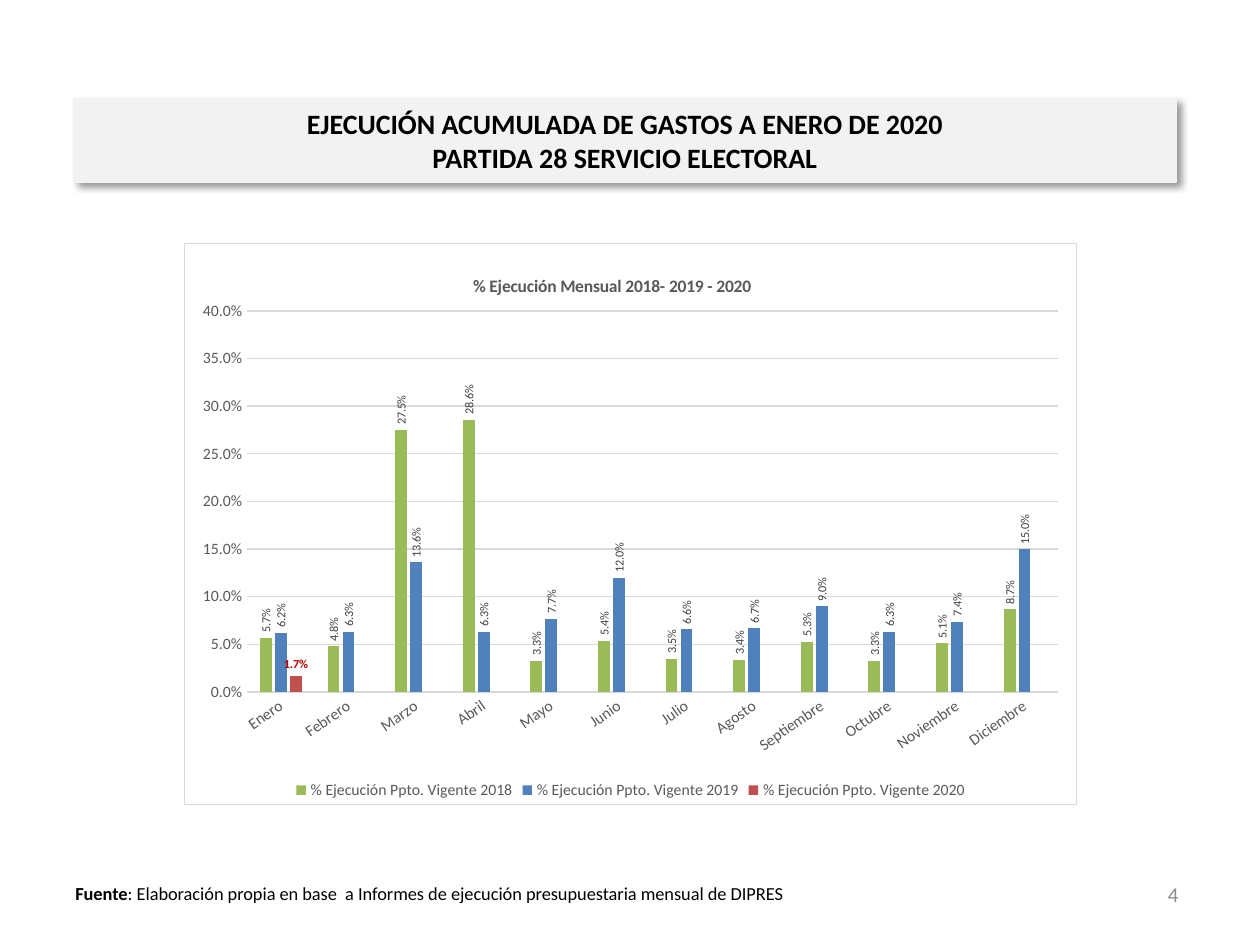
from dataclasses import dataclass
from typing import NamedTuple

from lxml.etree import _Element as Element
from pptx import Presentation
from pptx.chart.data import CategoryChartData
from pptx.dml.color import RGBColor
from pptx.enum.chart import XL_CHART_TYPE as ChartType
from pptx.enum.chart import XL_LABEL_POSITION as LabelPosition
from pptx.enum.chart import XL_LEGEND_POSITION as LegendPosition
from pptx.enum.chart import XL_TICK_MARK as TickMark
from pptx.enum.text import MSO_ANCHOR as Anchor
from pptx.enum.text import PP_ALIGN as Align
from pptx.oxml import parse_xml
from pptx.oxml.ns import nsdecls, qn
from pptx.util import Emu, Pt

EMU_PER_PX = 914400 / 126


@dataclass(frozen=True)
class Theme:
    font: str = "Calibri"
    ink: str = "000000"
    axis: str = "595959"
    label: str = "404040"
    alert: str = "C00000"
    page_number: str = "8C8C8C"
    rule: str = "D9D9D9"
    banner: str = "F2F2F2"
    paper: str = "FFFFFF"
    title_size: float = 16
    number_size: float = 12
    source_size: float = 10.5
    chart_size: float = 10
    axis_size: float = 9
    label_size: float = 7


class Box(NamedTuple):
    left: int
    top: int
    width: int
    height: int


class YearSeries(NamedTuple):
    year: int
    percents: tuple[float, ...]
    color: str
    label_color: str
    label_bold: bool
    label_angle: int


THEME = Theme()
MONTHS = ("Enero", "Febrero", "Marzo", "Abril", "Mayo", "Junio", "Julio",
          "Agosto", "Septiembre", "Octubre", "Noviembre", "Diciembre")
YEARS = (
    YearSeries(2018, (5.7, 4.8, 27.5, 28.6, 3.3, 5.4, 3.5, 3.4, 5.3, 3.3, 5.1, 8.7),
               "9BBB59", THEME.label, False, -90),
    YearSeries(2019, (6.2, 6.3, 13.6, 6.3, 7.7, 12.0, 6.6, 6.7, 9.0, 6.3, 7.4, 15.0),
               "4F81BD", THEME.label, False, -90),
    YearSeries(2020, (1.7,), "C0504D", THEME.alert, True, 0),
)


def px(length: int) -> Emu:
    return Emu(round(length * EMU_PER_PX))


def place(box: Box) -> tuple[Emu, ...]:
    return tuple(px(length) for length in box)


def style_font(font, size: float, color: str, bold: bool = False) -> None:
    font.name, font.size, font.bold = THEME.font, Pt(size), bold
    font.color.rgb = RGBColor.from_string(color)


def style_line(line, color: str) -> None:
    line.color.rgb = RGBColor.from_string(color)
    line.width = Pt(0.75)


def rotate_text(owner: Element, degrees: int) -> None:
    body = owner.find(qn("c:txPr")).find(qn("a:bodyPr"))
    body.set("rot", str(degrees * 60000))
    body.set("vert", "horz")


def set_layout(owner: Element, index: int, target: str = "", **shares: float) -> None:
    """Fix a chart part at shares of the chart's width and height."""
    for old in owner.findall(qn("c:layout")):
        owner.remove(old)
    inner = f'<c:layoutTarget val="{target}"/>' if target else ""
    modes = '<c:xMode val="edge"/><c:yMode val="edge"/>'
    sizes = "".join(f'<c:{key} val="{share}"/>' for key, share in shares.items())
    owner.insert(index, parse_xml(
        f'<c:layout {nsdecls("c")}><c:manualLayout>{inner}{modes}{sizes}'
        "</c:manualLayout></c:layout>"))


def add_banner(page, box: Box, text: str) -> None:
    banner = page.shapes.title
    banner.left, banner.top, banner.width, banner.height = place(box)
    banner.fill.solid()
    banner.fill.fore_color.rgb = RGBColor.from_string(THEME.banner)
    style_line(banner.line, THEME.banner)
    banner._element.spPr.append(parse_xml(
        f'<a:effectLst {nsdecls("a")}><a:outerShdw blurRad="50800" dist="38100" '
        f'dir="2700000" algn="tl" rotWithShape="0"><a:srgbClr val="{THEME.ink}">'
        '<a:alpha val="40000"/></a:srgbClr></a:outerShdw></a:effectLst>'))
    banner.text_frame.text = text
    banner.text_frame.vertical_anchor = Anchor.MIDDLE
    para = banner.text_frame.paragraphs[0]
    para.alignment = Align.CENTER
    for span in para.runs:
        style_font(span.font, THEME.title_size, THEME.ink, True)


def add_text(page, box: Box, spans: tuple[tuple[str, bool], ...], size: float,
             color: str, align: Align = Align.LEFT, anchor: Anchor = Anchor.TOP) -> None:
    frame = page.shapes.add_textbox(*place(box)).text_frame
    frame.word_wrap = True
    frame.vertical_anchor = anchor
    para = frame.paragraphs[0]
    para.alignment = align
    for text, bold in spans:
        span = para.add_run()
        span.text = text
        style_font(span.font, size, color, bold)


def style_axes(chart) -> None:
    months, shares = chart.category_axis, chart.value_axis
    for axis in (months, shares):
        axis.major_tick_mark = axis.minor_tick_mark = TickMark.NONE
        style_font(axis.tick_labels.font, THEME.axis_size, THEME.axis)
    style_line(months.format.line, THEME.rule)
    rotate_text(months._element, -35)
    shares.minimum_scale, shares.maximum_scale, shares.major_unit = 0, 0.4, 0.05
    shares.tick_labels.number_format = "0.0%"
    shares.tick_labels.number_format_is_linked = False
    shares.format.line.fill.background()
    style_line(shares.major_gridlines.format.line, THEME.rule)


def style_series(series, year: YearSeries) -> None:
    series.format.fill.solid()
    series.format.fill.fore_color.rgb = RGBColor.from_string(year.color)
    series.invert_if_negative = False
    labels = series.data_labels
    labels.show_value = True
    labels.position = LabelPosition.OUTSIDE_END
    labels.number_format, labels.number_format_is_linked = "0.0%", False
    style_font(labels.font, THEME.label_size, year.label_color, year.label_bold)
    rotate_text(labels._element, year.label_angle)


def add_spending_chart(page, box: Box) -> None:
    data = CategoryChartData(number_format="0.0%")
    data.categories = MONTHS
    for year in YEARS:
        data.add_series(f"% Ejecución Ppto. Vigente {year.year}",
                        [round(percent / 100, 3) for percent in year.percents])
    chart = page.shapes.add_chart(ChartType.COLUMN_CLUSTERED, *place(box), data).chart
    style_font(chart.font, THEME.chart_size, THEME.ink)

    # Frame around the whole chart
    space = chart._chartSpace
    space.find(qn("c:txPr")).addprevious(parse_xml(
        f'<c:spPr {nsdecls("c", "a")}><a:solidFill><a:srgbClr val="{THEME.paper}"/>'
        f'</a:solidFill><a:ln w="9525"><a:solidFill><a:srgbClr val="{THEME.rule}"/>'
        "</a:solidFill></a:ln></c:spPr>"))

    # Title and legend
    title = chart.chart_title
    title.text_frame.text = "% Ejecución Mensual 2018- 2019 - 2020"
    style_font(title.text_frame.paragraphs[0].runs[0].font,
               THEME.chart_size, THEME.axis, True)
    set_layout(title._element, 1, x=0.32, y=0.05)
    chart.has_legend = True
    chart.legend.position = LegendPosition.BOTTOM
    chart.legend.include_in_layout = False
    style_font(chart.legend.font, THEME.axis_size, THEME.axis)

    # Columns
    style_axes(chart)
    plot = chart.plots[0]
    plot.gap_width, plot.overlap, plot.vary_by_categories = 219, -27, False
    for series, year in zip(plot.series, YEARS):
        style_series(series, year)
    set_layout(space.chart.plotArea, 0, "inner", x=0.07, y=0.12, w=0.91, h=0.68)


def main() -> None:
    deck = Presentation()
    deck.slide_width, deck.slide_height = px(1260), px(945)
    page = deck.slides.add_slide(deck.slide_layouts[5])

    # Heading, chart, source note and page number
    add_banner(page, Box(74, 99, 1102, 83),
               "EJECUCIÓN ACUMULADA DE GASTOS A ENERO DE 2020\vPARTIDA 28 SERVICIO ELECTORAL")
    add_spending_chart(page, Box(184, 243, 893, 562))
    add_text(page, Box(63, 876, 745, 35),
             (("Fuente", True), (": Elaboración propia en base  a Informes de ejecución "
                                 "presupuestaria mensual de DIPRES", False)),
             THEME.source_size, THEME.ink)
    add_text(page, Box(897, 869, 294, 50), (("4", False),), THEME.number_size,
             THEME.page_number, Align.RIGHT, Anchor.MIDDLE)
    deck.save("out.pptx")


if __name__ == "__main__":
    main()
